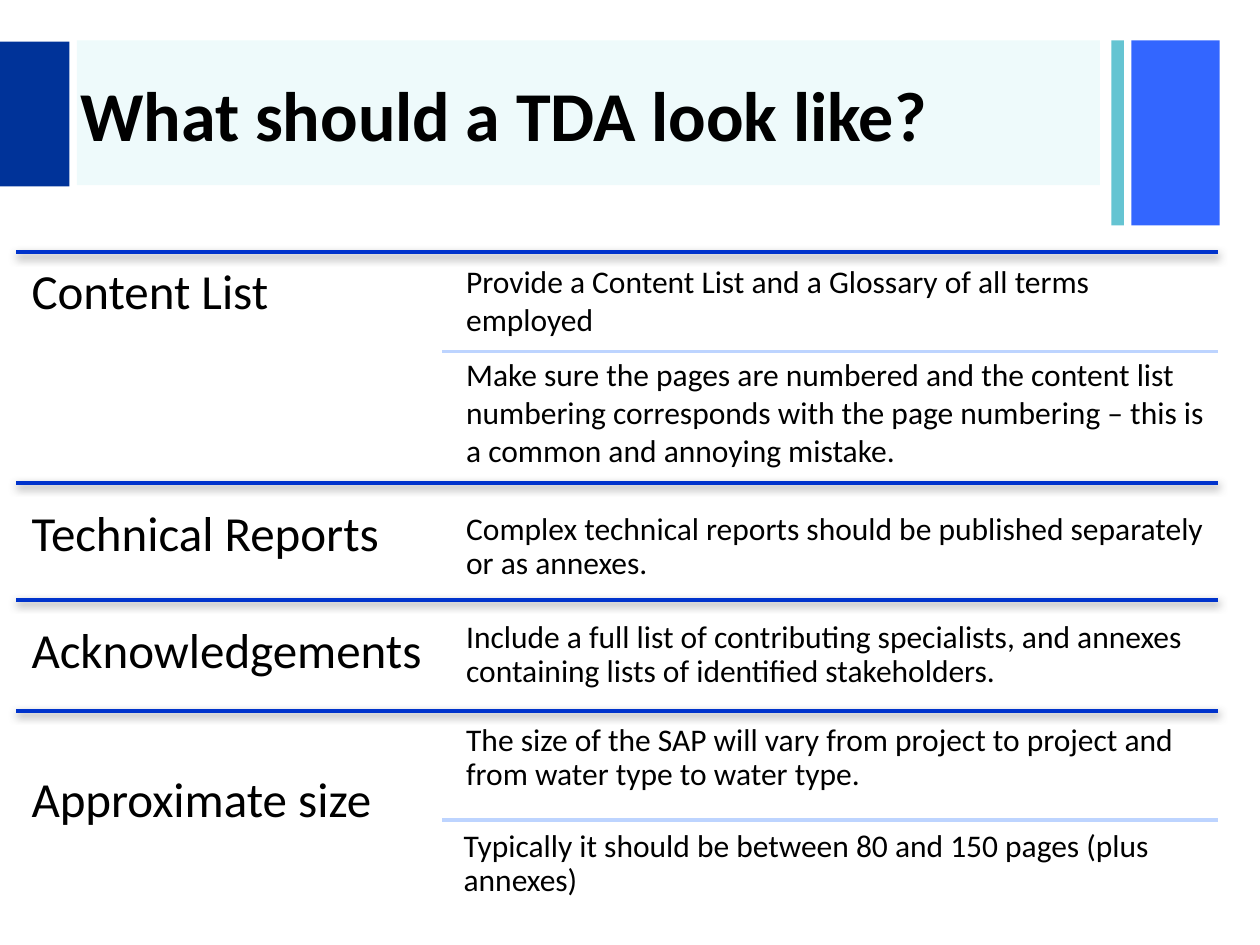
from dataclasses import dataclass

from lxml.etree import SubElement
from pptx import Presentation
from pptx.dml.color import RGBColor as Rgb
from pptx.enum.shapes import MSO_CONNECTOR as Link, MSO_SHAPE as Shape
from pptx.enum.text import MSO_ANCHOR as Anchor
from pptx.oxml.ns import qn
from pptx.util import Inches, Pt


@dataclass(frozen=True)
class Theme:
    font: str = "Calibri"
    ink: str = "000000"
    navy: str = "003399"
    blue: str = "3366FF"
    teal: str = "65C4D2"
    tint: str = "14C5D0"
    rule: str = "0033CC"
    pale: str = "BDD4FF"
    shade: str = "808080"
    title: int = 40
    head: int = 28
    body: int = 18


THEME = Theme()
LEFT, SPLIT, RIGHT = 0.13, 3.51, 9.67
BODY = 3.63

# Each section: rule height, heading, heading top, notes as (left, top, text, loose)
SECTIONS = [
    (2, "Content List", 2, [
        (BODY, 2.01, "Provide a Content List and a Glossary of all terms employed", True),
        (BODY, 2.75, "Make sure the pages are numbered and the content list numbering "
         "corresponds with the page numbering – this is a common and annoying mistake.", True),
    ]),
    (3.83, "Technical Reports", 3.92, [
        (BODY, 4, "Complex technical reports should be published separately or as annexes.",
         False),
    ]),
    (4.76, "Acknowledgements", 4.85, [
        (BODY, 4.86, "Include a full list of contributing specialists, and annexes "
         "containing lists of identified stakeholders.", False),
    ]),
    (5.64, "Approximate size", 6.03, [
        (BODY, 5.68, "The size of the SAP will vary from project to project and from "
         "water type to water type.", False),
        (3.61, 6.52, "Typically it should be between 80 and 150 pages (plus annexes)", False),
    ]),
]
SPLITS = [2.79, 6.51]


def add_block(slide, box, color, alpha=None):
    """Add a plain rectangle; alpha is its opacity in percent."""
    block = slide.shapes.add_shape(Shape.RECTANGLE, *map(Inches, box))
    block.shadow.inherit = False
    block.fill.solid()
    block.fill.fore_color.rgb = Rgb.from_string(color)
    block.line.fill.background()
    if alpha:
        tone = block.fill._xPr.find(f".//{qn('a:srgbClr')}")
        SubElement(tone, qn("a:alpha"), val=str(alpha * 1000))


def add_text(slide, box, text, size, inset, bold=False, tight=False, anchor=Anchor.TOP):
    frame = slide.shapes.add_textbox(*map(Inches, box)).text_frame
    frame.word_wrap = True
    frame.vertical_anchor = anchor
    frame.margin_left = frame.margin_right = Inches(inset)
    frame.margin_top = frame.margin_bottom = Inches(min(inset, 0.12))
    para = frame.paragraphs[0]
    para.text = text
    para.font.name = THEME.font
    para.font.size = Pt(size)
    para.font.bold = bold
    para.font.color.rgb = Rgb.from_string(THEME.ink)
    if tight:
        para.line_spacing = 0.9


def add_rule(slide, left, top, color, width, shadow=False):
    rule = slide.shapes.add_connector(
        Link.STRAIGHT, Inches(left), Inches(top), Inches(RIGHT), Inches(top))
    rule.line.color.rgb = Rgb.from_string(color)
    rule.line.width = Pt(width)
    effects = SubElement(rule._element.spPr, qn("a:effectLst"))
    if shadow:
        cast = SubElement(effects, qn("a:outerShdw"), blurRad=str(Pt(5)),
                          dist=str(Pt(2)), dir="5400000", rotWithShape="0")
        tone = SubElement(cast, qn("a:srgbClr"), val=THEME.shade)
        SubElement(tone, qn("a:alpha"), val="75000")


def add_banner(slide):
    add_block(slide, (8.98, 0.32, 0.7, 1.47), THEME.blue)
    add_block(slide, (8.82, 0.32, 0.1, 1.47), THEME.teal)
    add_block(slide, (0.61, 0.32, 8.12, 1.15), THEME.tint, alpha=7)
    add_block(slide, (0, 0.33, 0.55, 1.15), THEME.navy)
    add_text(slide, (0.54, 0.34, 8.27, 1.12), "What should a TDA look like?",
             THEME.title, 0.1, bold=True, anchor=Anchor.MIDDLE)


def add_section(slide, top, head, head_top, notes):
    add_rule(slide, LEFT, top, THEME.rule, 2.25, shadow=True)
    add_text(slide, (LEFT, head_top, SPLIT - LEFT, 0.75), head, THEME.head, 0.12, tight=True)
    for left, note_top, text, loose in notes:
        add_text(slide, (left, note_top, 6.04, 0.65), text, THEME.body, 0.07, tight=not loose)


def main():
    deck = Presentation()
    deck.slide_width, deck.slide_height = Inches(10), Inches(7.5)
    slide = deck.slides.add_slide(deck.slide_layouts[6])
    add_banner(slide)
    for section in SECTIONS:
        add_section(slide, *section)
    for top in SPLITS:
        add_rule(slide, SPLIT, top, THEME.pale, 2)
    deck.save("out.pptx")


if __name__ == "__main__":
    main()
